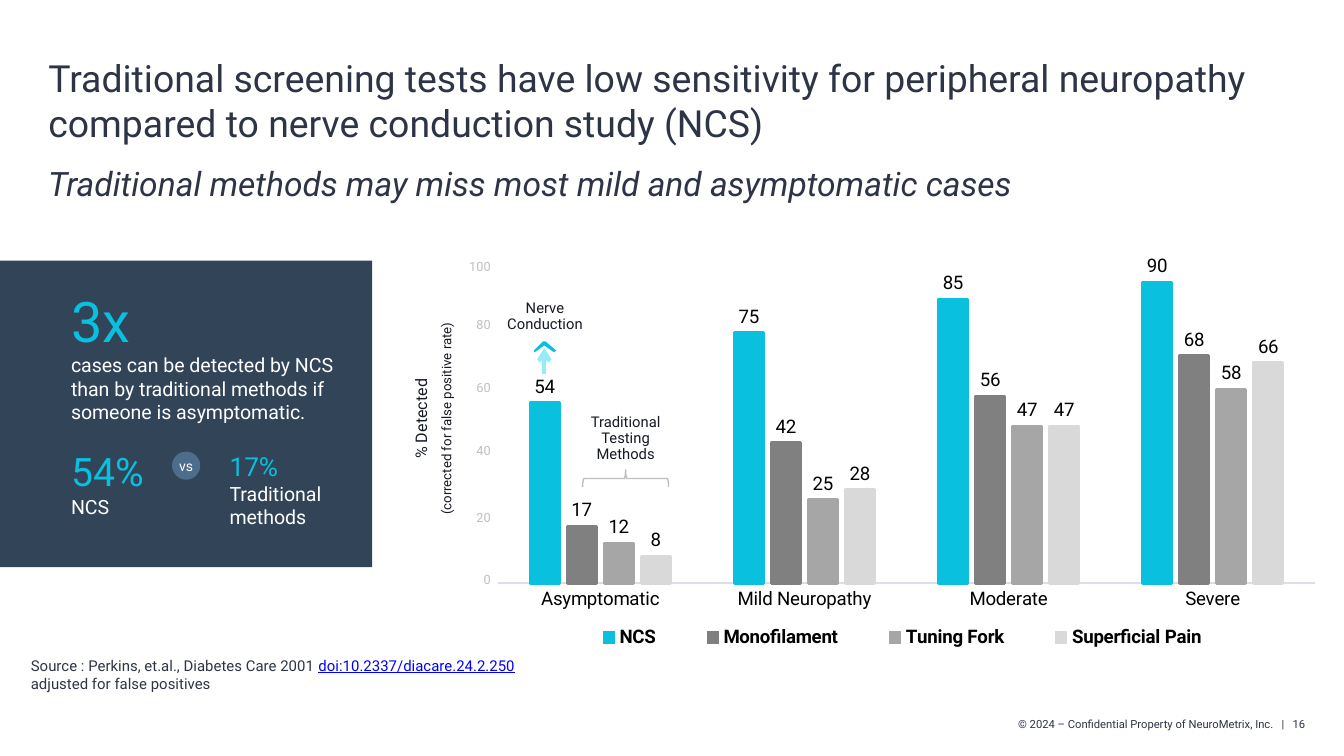
"""Build the slide on the sensitivity of neuropathy screening tests."""
from lxml import etree
from pptx import Presentation
from pptx.chart.data import CategoryChartData
from pptx.dml.color import RGBColor
from pptx.enum.chart import XL_CHART_TYPE, XL_LABEL_POSITION, XL_LEGEND_POSITION, XL_TICK_MARK
from pptx.enum.shapes import MSO_CONNECTOR, MSO_SHAPE
from pptx.enum.text import MSO_ANCHOR, MSO_AUTO_SIZE, PP_ALIGN
from pptx.oxml import parse_xml
from pptx.oxml.ns import nsdecls, qn
from pptx.util import Inches, Pt

LEFT, CENTER, RIGHT = PP_ALIGN.LEFT, PP_ALIGN.CENTER, PP_ALIGN.RIGHT
TOP, MIDDLE, BOTTOM = MSO_ANCHOR.TOP, MSO_ANCHOR.MIDDLE, MSO_ANCHOR.BOTTOM
NO_FIT = MSO_AUTO_SIZE.NONE
COLUMNS = XL_CHART_TYPE.COLUMN_CLUSTERED
OUTSIDE_END = XL_LABEL_POSITION.OUTSIDE_END
LEGEND_BOTTOM = XL_LEGEND_POSITION.BOTTOM
NO_TICK = XL_TICK_MARK.NONE
RECTANGLE, OVAL, BRACE = MSO_SHAPE.RECTANGLE, MSO_SHAPE.OVAL, MSO_SHAPE.RIGHT_BRACE
STRAIGHT = MSO_CONNECTOR.STRAIGHT

INK = RGBColor(0x2D, 0x34, 0x46)
DARK = RGBColor(0x16, 0x1A, 0x23)
BLACK = RGBColor(0x00, 0x00, 0x00)
WHITE = RGBColor(0xFF, 0xFF, 0xFF)
NAVY = RGBColor(0x32, 0x44, 0x58)
STEEL = RGBColor(0x4E, 0x6C, 0x8C)
CYAN = RGBColor(0x09, 0xC0, 0xDE)
PALE_CYAN = RGBColor(0x94, 0xEC, 0xFB)
LINK_BLUE = RGBColor(0x00, 0x00, 0xFF)
AXIS_GRAY = RGBColor(0xDB, 0xDF, 0xE8)
LABEL_GRAY = RGBColor(0xBF, 0xBF, 0xBF)
DARK_GRAY = RGBColor(0x80, 0x80, 0x80)
MID_GRAY = RGBColor(0xA6, 0xA6, 0xA6)
LIGHT_GRAY = RGBColor(0xD9, 0xD9, 0xD9)

FONT = "Roboto"
SLIDE_WIDTH = 10
SLIDE_HEIGHT = SLIDE_WIDTH * 9 / 16
TITLE = ("Traditional screening tests have low sensitivity for peripheral neuropathy "
         "compared to nerve conduction study (NCS)")
TEXTS = [
    dict(box=(0.26, 1.16, 8.39, 0.4), paragraphs=[
        [("Traditional methods may miss most mild and asymptomatic cases", 18, INK, "italic")]]),
    dict(box=(0.43, 2.08, 2.19, 1.16), paragraphs=[
        [("3x", 30, CYAN)],
        [("cases can be detected by NCS than by traditional methods if someone is asymptomatic.",
          10.5, WHITE)]]),
    dict(box=(0.43, 3.28, 0.95, 0.49), paragraphs=[[("54% ", 21, CYAN), ("NCS", 10.5, WHITE)]]),
    dict(box=(1.61, 3.3, 0.91, 0.72), paragraphs=[
        [("17%", 14, CYAN)], [("Traditional methods", 10.5, WHITE)]]),
    dict(box=(0.16, 4.97, 5.24, 0.22), anchor=BOTTOM, insets=(0.07, 0.04), paragraphs=[
        [("Source : Perkins, et.al., Diabetes Care 2001 ", 8, INK),
         ("doi:10.2337/diacare.24.2.250", 8, LINK_BLUE, "underline")],
        [("adjusted for false positives", 8, INK)]]),
    dict(box=(7.24, 5.29, 2.57, 0.22), align=RIGHT, paragraphs=[
        [("© 2024 – Confidential Property of NeuroMetrix, Inc.   |   16", 6, INK)]]),
    dict(box=(2.34, 2.83, 1.91, 0.57), align=CENTER, rotation=270, space_after=4.2, paragraphs=[
        [("% Detected", 8.6, DARK)], [("(corrected for false positive rate)", 7.1, DARK)]]),
    dict(box=(3.59, 2.19, 0.93, 0.33), align=CENTER, line_spacing=0.9, paragraphs=[
        [("Nerve Conduction", 7.9, DARK)]]),
    dict(box=(4.19, 3.04, 0.93, 0.46), align=CENTER, line_spacing=0.9, paragraphs=[
        [("Traditional Testing", 7.9, DARK)], [("Methods", 7.9, DARK)]]),
]
SCALE_LABELS = {"0": 4.2, "20": 3.74, "40": 3.24, "60": 2.77, "80": 2.3, "100": 1.87}
CATEGORIES = ["Asymptomatic", "Mild Neuropathy", "Moderate", "Severe"]
SERIES = [
    ("NCS", (54, 75, 85, 90), CYAN),
    ("Monofilament", (17, 42, 56, 68), DARK_GRAY),
    ("Tuning Fork", (12, 25, 47, 58), MID_GRAY),
    ("Superficial Pain", (8, 28, 47, 66), LIGHT_GRAY),
]
CHEVRON = [(3.97, 2.61), (4.04, 2.54), (4.06, 2.54), (4.14, 2.61),
           (4.12, 2.62), (4.05, 2.57), (3.98, 2.62)]


def inches(values):
    return [Inches(value) for value in values]


def style_font(font, size, color, bold=None):
    font.name, font.size, font.bold = FONT, Pt(size), bold
    font.color.rgb = color


def write(shape, paragraphs, align=LEFT, anchor=TOP, insets=(0.1, 0.05),
          space_after=0, line_spacing=None):
    frame = shape.text_frame
    frame.word_wrap = True
    frame.auto_size = NO_FIT
    frame.vertical_anchor = anchor
    frame.margin_left = frame.margin_right = Inches(insets[0])
    frame.margin_top = frame.margin_bottom = Inches(insets[1])
    for index, runs in enumerate(paragraphs):
        paragraph = frame.add_paragraph() if index else frame.paragraphs[0]
        paragraph.alignment = align
        paragraph.space_before = Pt(0)
        paragraph.space_after = Pt(space_after)
        paragraph.line_spacing = line_spacing
        for text, size, color, *styles in runs:
            run = paragraph.add_run()
            run.text = text
            style_font(run.font, size, color)
            for style in styles:
                setattr(run.font, style, True)


def add_text(slide, box, paragraphs, rotation=0, **options):
    shape = slide.shapes.add_textbox(*inches(box))
    shape.rotation = rotation
    write(shape, paragraphs, **options)


def paint(shape, color):
    shape.shadow.inherit = False
    shape.fill.solid()
    shape.fill.fore_color.rgb = color
    shape.line.fill.background()


def set_line(line, color, width):
    line.color.rgb = color
    line.width = Pt(width)


def set_layout(parent, index, box, target=""):
    for old in parent.findall(qn("c:layout")):
        parent.remove(old)
    sizes = "".join(f'<c:{tag} val="{value}"/>' for tag, value in zip("xywh", box))
    parent.insert(index, parse_xml(
        f'<c:layout {nsdecls("c")}><c:manualLayout>{target}<c:xMode val="edge"/>'
        f'<c:yMode val="edge"/>{sizes}</c:manualLayout></c:layout>'))


def add_detection_chart(slide):
    data = CategoryChartData()
    data.categories = CATEGORIES
    for name, values, _ in SERIES:
        data.add_series(name, values)
    chart = slide.shapes.add_chart(COLUMNS, *inches((3.58, 1.79, 6.33, 3.11)), data).chart
    chart.has_title = False
    style_font(chart.font, 10, BLACK)
    plot = chart.plots[0]
    plot.gap_width, plot.overlap = 219, -27
    plot.vary_by_categories = False
    for series, (_, _, color) in zip(plot.series, SERIES):
        series.format.fill.solid()
        series.format.fill.fore_color.rgb = color
        set_line(series.format.line, color, 1.5)
        labels = series.data_labels
        labels.show_value = True
        labels.position = OUTSIDE_END
        style_font(labels.font, 10, BLACK)
    value_axis = chart.value_axis
    value_axis.minimum_scale, value_axis.maximum_scale = 0, 100
    value_axis.has_major_gridlines = False
    value_axis.visible = False
    category_axis = chart.category_axis
    category_axis.major_tick_mark = NO_TICK
    set_line(category_axis.format.line, AXIS_GRAY, 0.75)
    style_font(category_axis.tick_labels.font, 10, BLACK)
    chart.has_legend = True
    chart.legend.position = LEGEND_BOTTOM
    chart.legend.include_in_layout = False
    style_font(chart.legend.font, 10, BLACK, bold=True)
    body = chart.element.find(qn("c:chart"))
    set_layout(body.find(qn("c:plotArea")), 0, (0.02, 0.02, 0.96, 0.8),
               '<c:layoutTarget val="inner"/>')
    set_layout(body.find(qn("c:legend")), 1, (0.09, 0.91, 0.81, 0.08))


def add_arrow(slide):
    arrow = slide.shapes.add_connector(STRAIGHT, *inches((4.05, 2.78, 4.05, 2.59)))
    set_line(arrow.line, PALE_CYAN, 2.25)
    properties = arrow.element.spPr
    etree.SubElement(properties.find(qn("a:ln")), qn("a:tailEnd"), type="arrow")
    etree.SubElement(properties, qn("a:effectLst"))


def main():
    presentation = Presentation()
    presentation.slide_width, presentation.slide_height = inches((SLIDE_WIDTH, SLIDE_HEIGHT))
    slide = presentation.slides.add_slide(presentation.slide_layouts[5])
    shapes = slide.shapes
    title = shapes.title
    title.left, title.top, title.width, title.height = inches((0.26, 0.36, 9.42, 0.83))
    write(title, [[(TITLE, 20, INK)]])
    paint(shapes.add_shape(RECTANGLE, *inches((0, 1.94, 2.77, 2.28))), NAVY)
    add_detection_chart(slide)
    for text in TEXTS:
        add_text(slide, **text)
    for label, top in SCALE_LABELS.items():
        add_text(slide, (3.37, top, 0.38, 0.22), [[(label, 6.8, LABEL_GRAY)]],
                 align=RIGHT, anchor=MIDDLE, space_after=8.5)
    badge = shapes.add_shape(OVAL, *inches((1.28, 3.36, 0.21, 0.21)))
    paint(badge, STEEL)
    write(badge, [[("vs", 7.5, WHITE)]], align=CENTER, anchor=MIDDLE, insets=(0, 0))
    brace = shapes.add_shape(BRACE, *inches((4.59, 3.24, 0.13, 0.64)))
    brace.rotation = 270
    brace.shadow.inherit = False
    brace.fill.background()
    set_line(brace.line, LABEL_GRAY, 0.75)
    start, *points = [inches(point) for point in CHEVRON]
    builder = shapes.build_freeform(*start)
    builder.add_line_segments(points, close=True)
    paint(builder.convert_to_shape(), CYAN)
    add_arrow(slide)
    presentation.save("out.pptx")


if __name__ == "__main__":
    main()
